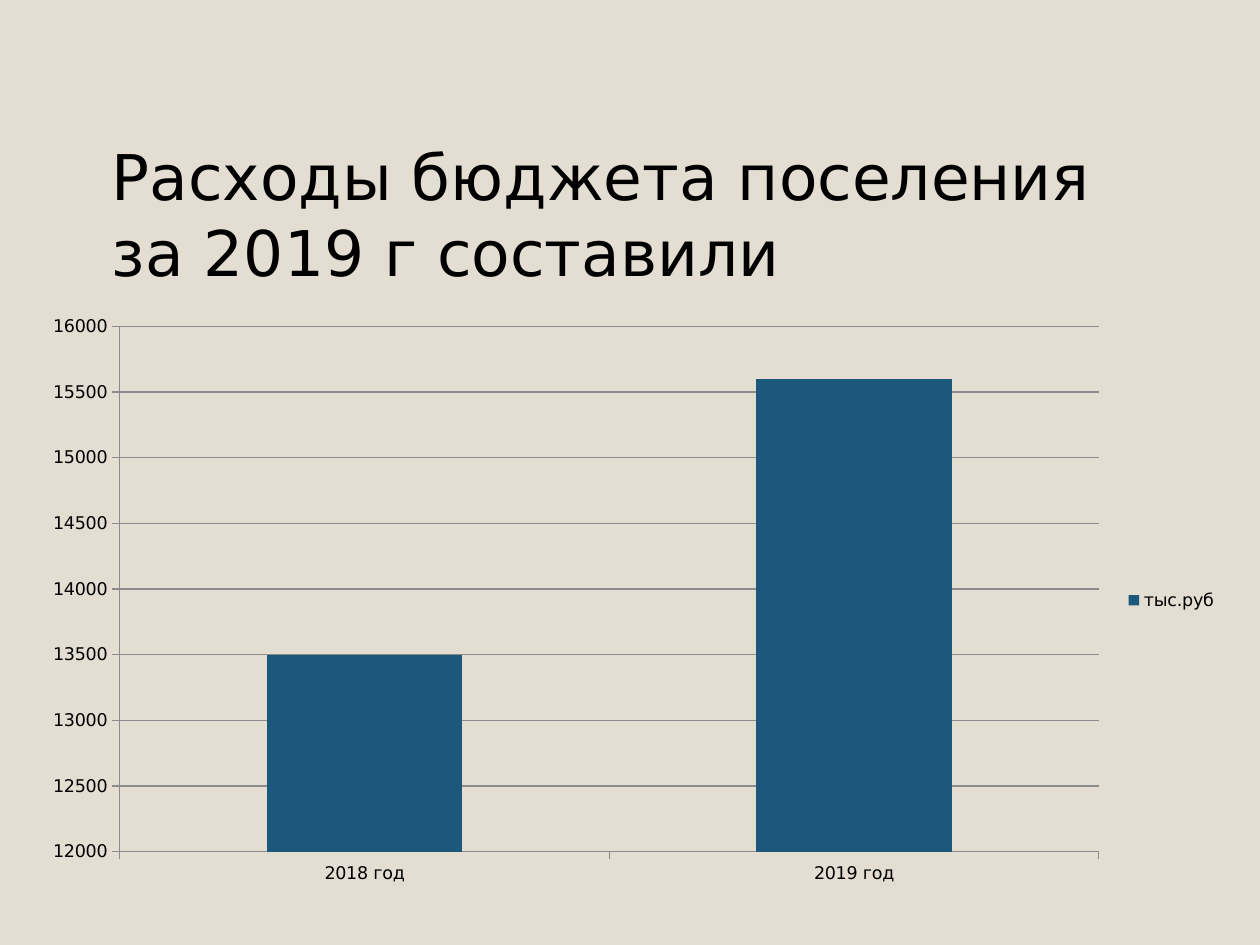
from pptx import Presentation
from pptx.chart.data import CategoryChartData
from pptx.dml.color import RGBColor
from pptx.enum.chart import XL_CHART_TYPE, XL_LEGEND_POSITION, XL_TICK_MARK
from pptx.enum.text import MSO_ANCHOR
from pptx.util import Pt

STACKED = XL_CHART_TYPE.COLUMN_STACKED
LEGEND_RIGHT = XL_LEGEND_POSITION.RIGHT
TICK_OUTSIDE = XL_TICK_MARK.OUTSIDE
TICK_NONE = XL_TICK_MARK.NONE
MIDDLE = MSO_ANCHOR.MIDDLE

FONT = "DejaVu Sans"
BACKGROUND = "E3DED1"
TEXT = "000000"
BAR = "1B587C"
GRID = "8B8B8B"


def color(value: str) -> RGBColor:
    return RGBColor.from_string(value)


def style_font(font, size: float) -> None:
    font.name = FONT
    font.size = Pt(size)
    font.bold = False
    font.color.rgb = color(TEXT)


def style_line(line) -> None:
    line.width = Pt(0.75)
    line.color.rgb = color(GRID)


def add_title(page, text: str) -> None:
    box = page.shapes.add_textbox(Pt(56.9), Pt(78.5), Pt(612), Pt(83.5))
    frame = box.text_frame
    frame.word_wrap = True
    frame.vertical_anchor = MIDDLE
    frame.margin_bottom = 0
    frame.text = text
    style_font(frame.paragraphs[0].runs[0].font, 36)


def add_expense_chart(page) -> None:
    data = CategoryChartData()
    data.categories = ["2018 год", "2019 год"]
    data.add_series("тыс.руб", [13500, 15600])
    chart = page.shapes.add_chart(
        STACKED, Pt(16.6), Pt(174.2), Pt(686.2), Pt(337.7), data
    ).chart
    style_font(chart.font, 10)
    chart.has_title = False
    chart.has_legend = True
    chart.legend.position = LEGEND_RIGHT
    chart.legend.include_in_layout = False

    plot = chart.plots[0]
    plot.gap_width = 150
    plot.overlap = 100
    plot.vary_by_categories = False
    fill = plot.series[0].format.fill
    fill.solid()
    fill.fore_color.rgb = color(BAR)

    for axis in (chart.category_axis, chart.value_axis):
        axis.major_tick_mark = TICK_OUTSIDE
        axis.minor_tick_mark = TICK_NONE
        style_line(axis.format.line)
    values = chart.value_axis
    values.minimum_scale = 12000
    values.maximum_scale = 16000
    values.major_unit = 500
    values.has_major_gridlines = True
    style_line(values.major_gridlines.format.line)


def main() -> None:
    deck = Presentation()
    deck.slide_width = Pt(720)
    deck.slide_height = Pt(540)
    page = deck.slides.add_slide(deck.slide_layouts[6])
    page.background.fill.solid()
    page.background.fill.fore_color.rgb = color(BACKGROUND)
    add_title(page, "Расходы бюджета поселения за 2019 г составили")
    add_expense_chart(page)
    deck.save("out.pptx")


if __name__ == "__main__":
    main()
